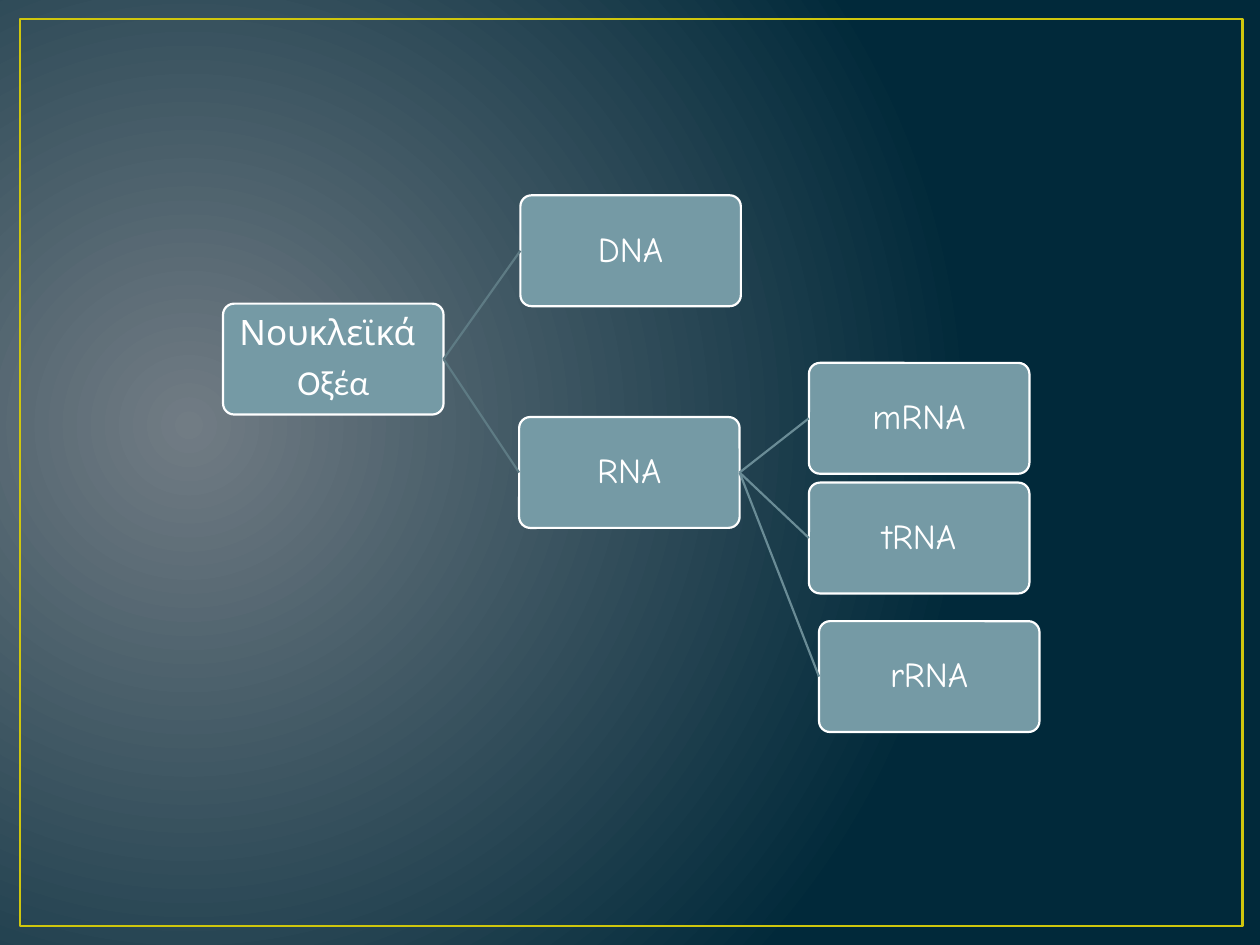
from lxml import etree
from pptx import Presentation
from pptx.dml.color import RGBColor
from pptx.enum.shapes import MSO_CONNECTOR as Link, MSO_SHAPE as Shape
from pptx.enum.text import MSO_ANCHOR as Anchor, PP_ALIGN as Align
from pptx.oxml.ns import qn
from pptx.util import Inches, Pt

COLORS = {
    "glow": "717C84", "night": "01293A", "frame": "CFC60D", "box": "759AA5",
    "white": "FFFFFF", "link1": "5E7B84", "link2": "6A8C96",
}
BOX_WIDTH, BOX_HEIGHT = 1.75, 0.88
LEFT_SITE, RIGHT_SITE = 1, 3


def color(name):
    return RGBColor.from_string(COLORS[name])


def set_line(shape, name, width):
    shape.line.color.rgb = color(name)
    shape.line.width = Pt(width)


deck = Presentation()
deck.slide_width, deck.slide_height = Inches(10), Inches(7.5)
page = deck.slides.add_slide(deck.slide_layouts[6])

# Background: a round glow centred left of the middle
fill = page.background.fill
fill.gradient()
for stop, name in zip(fill.gradient_stops, ("glow", "night")):
    stop.color.rgb = color(name)
gradient = page.element.find(".//" + qn("a:gradFill"))
gradient.remove(gradient.find(qn("a:lin")))
circle = etree.SubElement(gradient, qn("a:path"), {"path": "circle"})
etree.SubElement(circle, qn("a:fillToRect"),
                 {"l": "15000", "t": "50000", "r": "85000", "b": "60000"})

frame = page.shapes.add_shape(
    Shape.RECTANGLE, Inches(0.16), Inches(0.15), Inches(9.7), Inches(7.2))
frame.shadow.inherit = False
frame.fill.background()
set_line(frame, "frame", 1.5)

# Tree nodes: key, left, top, lines of (text, font), parent, link colour
nodes = [
    ("acids", 1.77, 2.41,
     [("Νουκλεϊκά ", "Comic Neue"), ("Οξέα", "Calibri")], None, None),
    ("DNA", 4.13, 1.55, [("DNA", "Comic Neue")], "acids", "link1"),
    ("RNA", 4.12, 3.31, [("RNA", "Comic Neue")], "acids", "link1"),
    ("mRNA", 6.42, 2.88, [("mRNA", "Comic Neue")], "RNA", "link2"),
    ("tRNA", 6.42, 3.83, [("tRNA", "Comic Neue")], "RNA", "link2"),
    ("rRNA", 6.5, 4.93, [("rRNA", "Comic Neue")], "RNA", "link2"),
]
frame_format = {
    "word_wrap": True, "vertical_anchor": Anchor.MIDDLE,
    "margin_left": Inches(0.04), "margin_right": Inches(0.04),
    "margin_top": Inches(0.04), "margin_bottom": Inches(0.04),
}
para_format = {"alignment": Align.CENTER, "line_spacing": 0.9, "space_after": Pt(7)}

boxes = {}
for key, left, top, lines, parent, link_color in nodes:
    box = page.shapes.add_shape(
        Shape.ROUNDED_RECTANGLE, Inches(left), Inches(top),
        Inches(BOX_WIDTH), Inches(BOX_HEIGHT))
    boxes[key] = box
    box.adjustments[0] = 0.1
    box.shadow.inherit = False
    box.fill.solid()
    box.fill.fore_color.rgb = color("box")
    set_line(box, "white", 1.25)

    text = box.text_frame
    for name, value in frame_format.items():
        setattr(text, name, value)
    for index, (words, font) in enumerate(lines):
        para = text.add_paragraph() if index else text.paragraphs[0]
        for name, value in para_format.items():
            setattr(para, name, value)
        span = para.add_run()
        span.text = words
        span.font.name = font
        span.font.size = Pt(20)
        span.font.color.rgb = color("white")

    if parent:
        link = page.shapes.add_connector(Link.STRAIGHT, 0, 0, 0, 0)
        link.begin_connect(boxes[parent], RIGHT_SITE)
        link.end_connect(box, LEFT_SITE)
        set_line(link, link_color, 1.25)
        etree.SubElement(link.element.spPr, qn("a:effectLst"))

deck.save("out.pptx")
